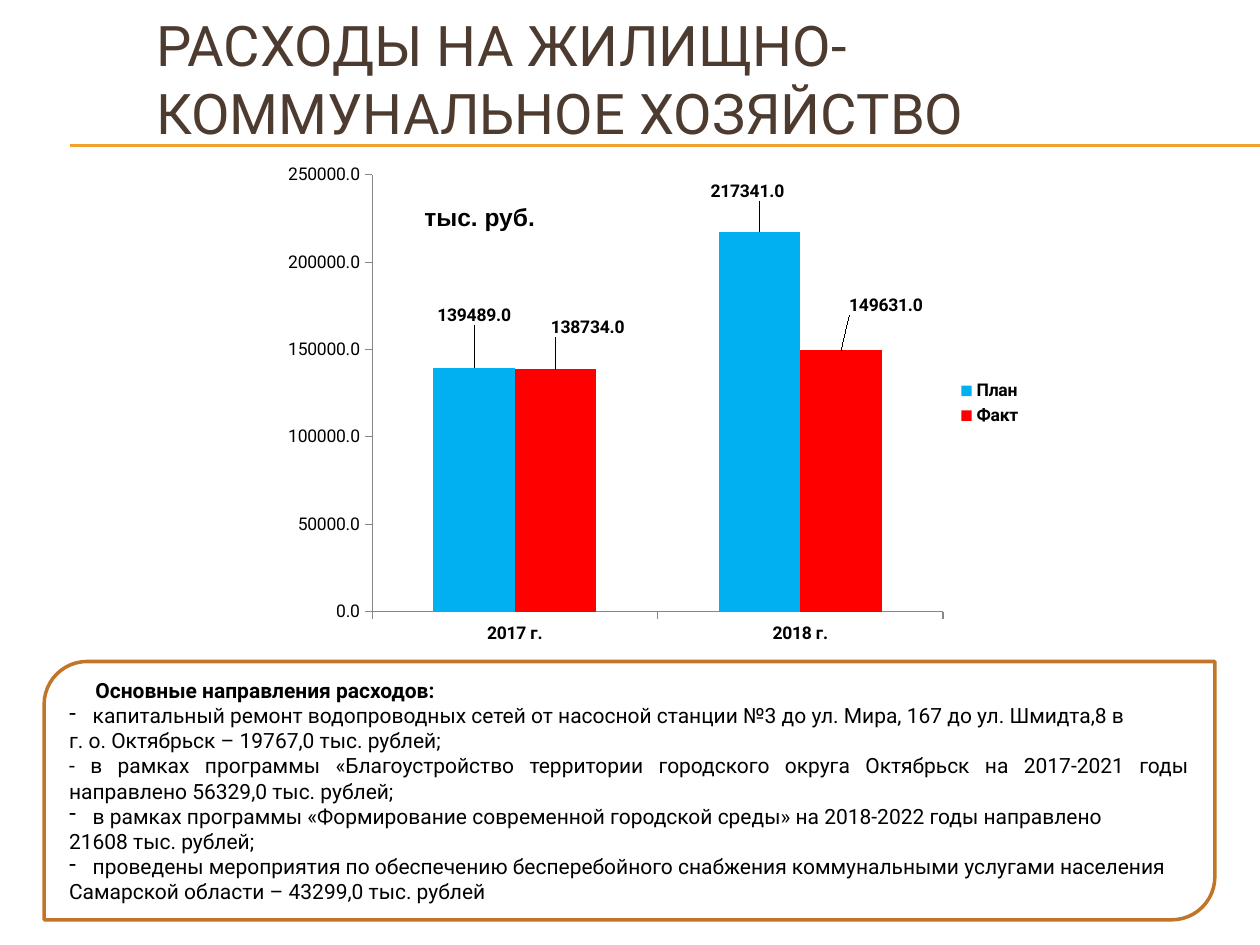
from lxml.etree import SubElement
from pptx import Presentation
from pptx.chart.data import CategoryChartData
from pptx.dml.color import RGBColor
from pptx.enum.chart import XL_CHART_TYPE, XL_LABEL_POSITION, XL_LEGEND_POSITION, XL_TICK_MARK
from pptx.enum.shapes import MSO_CONNECTOR, MSO_SHAPE
from pptx.enum.text import MSO_ANCHOR, PP_ALIGN
from pptx.oxml.ns import qn
from pptx.util import Pt

FONT = "Roboto"
SERIES = [
    ("План", "00B0F0", (139489, 217341), ((0, -0.075), (-0.016, -0.052))),
    ("Факт", "FF0000", (138734, 149631), ((0.042, -0.055), (0.059, -0.06))),
]
SPENDING = [
    ("капитальный ремонт водопроводных сетей от насосной станции №3 до ул. Мира, 167 до ул. Шмидта,8 в", True),
    ("г. о. Октябрьск – 19767,0 тыс. рублей;", False),
    ("- в рамках программы «Благоустройство территории городского округа Октябрьск "
     "на 2017-2021 годы направлено 56329,0 тыс. рублей;", False),
    ("в рамках программы «Формирование современной городской среды» на 2018-2022 годы направлено", True),
    ("21608 тыс. рублей;", False),
    ("проведены мероприятия по обеспечению бесперебойного снабжения коммунальными услугами населения", True),
    ("Самарской области – 43299,0 тыс. рублей", False),
]


def rgb(value):
    """Turn a hex string into a colour."""
    return RGBColor.from_string(value)


def set_font(font, size, color="000000", bold=False, name=FONT):
    """Set the look of a font."""
    font.name, font.size, font.bold = name, Pt(size), bold
    font.color.rgb = rgb(color)


def add_run(p, text, size, **look):
    """Add one formatted run to a paragraph."""
    r = p.add_run()
    r.text = text
    set_font(r.font, size, **look)


def add_text(s, box, text, size, **look):
    """Add a wrapped text box with one line of thought."""
    tf = s.shapes.add_textbox(*map(Pt, box)).text_frame
    tf.word_wrap = True
    tf.vertical_anchor = MSO_ANCHOR.MIDDLE
    add_run(tf.paragraphs[0], text, size, **look)


def add_rule(s, y):
    """Add a thin line from the left margin to the slide edge."""
    line = s.shapes.add_connector(MSO_CONNECTOR.STRAIGHT, Pt(40.3), Pt(y), Pt(720), Pt(y))
    line.line.color.rgb = rgb("F0A22E")
    line.line.width = Pt(0.75)
    SubElement(line._element.spPr, qn("a:effectLst"))


def set_indent(p, margin, first, bullet=None):
    """Set paragraph indents and an optional bullet character."""
    pPr = p._p.get_or_add_pPr()
    pPr.set("marL", str(Pt(margin)))
    pPr.set("indent", str(Pt(first)))
    if bullet:
        SubElement(pPr, qn("a:buChar")).set("char", bullet)


def add_spending(s):
    """Add the rounded panel that lists the spending."""
    sp = s.shapes.add_shape(MSO_SHAPE.ROUND_2_DIAG_RECTANGLE, Pt(25.2), Pt(378), Pt(669), Pt(147.6))
    sp.shadow.inherit = False
    sp.fill.solid()
    sp.fill.fore_color.rgb = rgb("FFFFFF")
    sp.line.color.rgb = rgb("C17529")
    sp.line.width = Pt(2)
    tf = sp.text_frame
    tf.word_wrap = True
    tf.vertical_anchor = MSO_ANCHOR.MIDDLE
    p = tf.paragraphs[0]
    p.alignment = PP_ALIGN.JUSTIFY
    set_indent(p, 0, 15)
    add_run(p, "Основные направления расходов:", 12, bold=True)
    for text, bulleted in SPENDING:
        p = tf.add_paragraph()
        p.alignment = PP_ALIGN.JUSTIFY
        if bulleted:
            set_indent(p, 13.5, -13.5, "-")
        add_run(p, text, 12)


def add_layout(parent, index, **values):
    """Insert a manual chart layout into an element."""
    layout = SubElement(parent, qn("c:layout"))
    parent.insert(index, layout)
    manual = SubElement(layout, qn("c:manualLayout"))
    for tag, value in values.items():
        SubElement(manual, qn(f"c:{tag}")).set("val", str(value))


def style_axis(axis, bold):
    """Give an axis grey lines, outer ticks and its font."""
    axis.has_major_gridlines = False
    axis.major_tick_mark = XL_TICK_MARK.OUTSIDE
    axis.format.line.color.rgb = rgb("868686")
    axis.format.line.width = Pt(0.75)
    set_font(axis.tick_labels.font, 10, bold=bold)


def style_series(series, color, offsets):
    """Colour a series and shift its value labels."""
    series.format.fill.solid()
    series.format.fill.fore_color.rgb = rgb(color)
    labels = series.data_labels
    labels.show_value = True
    labels.number_format, labels.number_format_is_linked = "0.0", False
    set_font(labels.font, 10, bold=True)
    for i in range(len(offsets)):
        label = series.points[i].data_label
        set_font(label.font, 10, bold=True)
        label.position = XL_LABEL_POSITION.OUTSIDE_END
    for dLbl, (x, y) in zip(labels._element.findall(qn("c:dLbl")), offsets):
        add_layout(dLbl, 1, x=x, y=y)


def add_spending_chart(s):
    """Add the clustered columns of plan and fact."""
    data = CategoryChartData(number_format="0.0")
    data.categories = ["2017 г.", "2018 г."]
    for name, _, values, _ in SERIES:
        data.add_series(name, values)
    chart = s.shapes.add_chart(XL_CHART_TYPE.COLUMN_CLUSTERED, Pt(156.2), Pt(88.6), Pt(434.9), Pt(283.7), data).chart
    set_font(chart.font, 10)
    chart.has_title = False
    chart.has_legend = True
    chart.legend.position = XL_LEGEND_POSITION.RIGHT
    chart.legend.include_in_layout = False
    set_font(chart.legend.font, 10, bold=True)
    style_axis(chart.category_axis, True)
    style_axis(chart.value_axis, False)
    axis = chart.value_axis
    axis.minimum_scale, axis.maximum_scale, axis.major_unit = 0, 250000, 50000
    axis.tick_labels.number_format = "0.0"
    axis.tick_labels.number_format_is_linked = False
    plot = chart.plots[0]
    plot.vary_by_categories = False
    plot.gap_width, plot.overlap = 150, 0
    for series, (_, color, _, offsets) in zip(plot.series, SERIES):
        style_series(series, color, offsets)
    area = chart._chartSpace.chart.plotArea
    for old in area.findall(qn("c:layout")):
        area.remove(old)
    add_layout(area, 0, layoutTarget="inner", xMode="edge", yMode="edge", x=0.13, y=0.04, w=0.75, h=0.88)


def main():
    """Build the slide and save it."""
    prs = Presentation()
    prs.slide_width, prs.slide_height = Pt(720), Pt(540)
    s = prs.slides.add_slide(prs.slide_layouts[6])
    for y in (82.8, 83.5):
        add_rule(s, y)
    add_text(s, (82.1, 11.5, 629.3, 66.2), "РАСХОДЫ НА ЖИЛИЩНО-КОММУНАЛЬНОЕ ХОЗЯЙСТВО", 32, color="4E3B30")
    add_spending(s)
    add_spending_chart(s)
    add_text(s, (235.4, 111.6, 85, 24.5), "тыс. руб.", 14, bold=True, name="Arial")
    prs.save("out.pptx")


if __name__ == "__main__":
    main()
